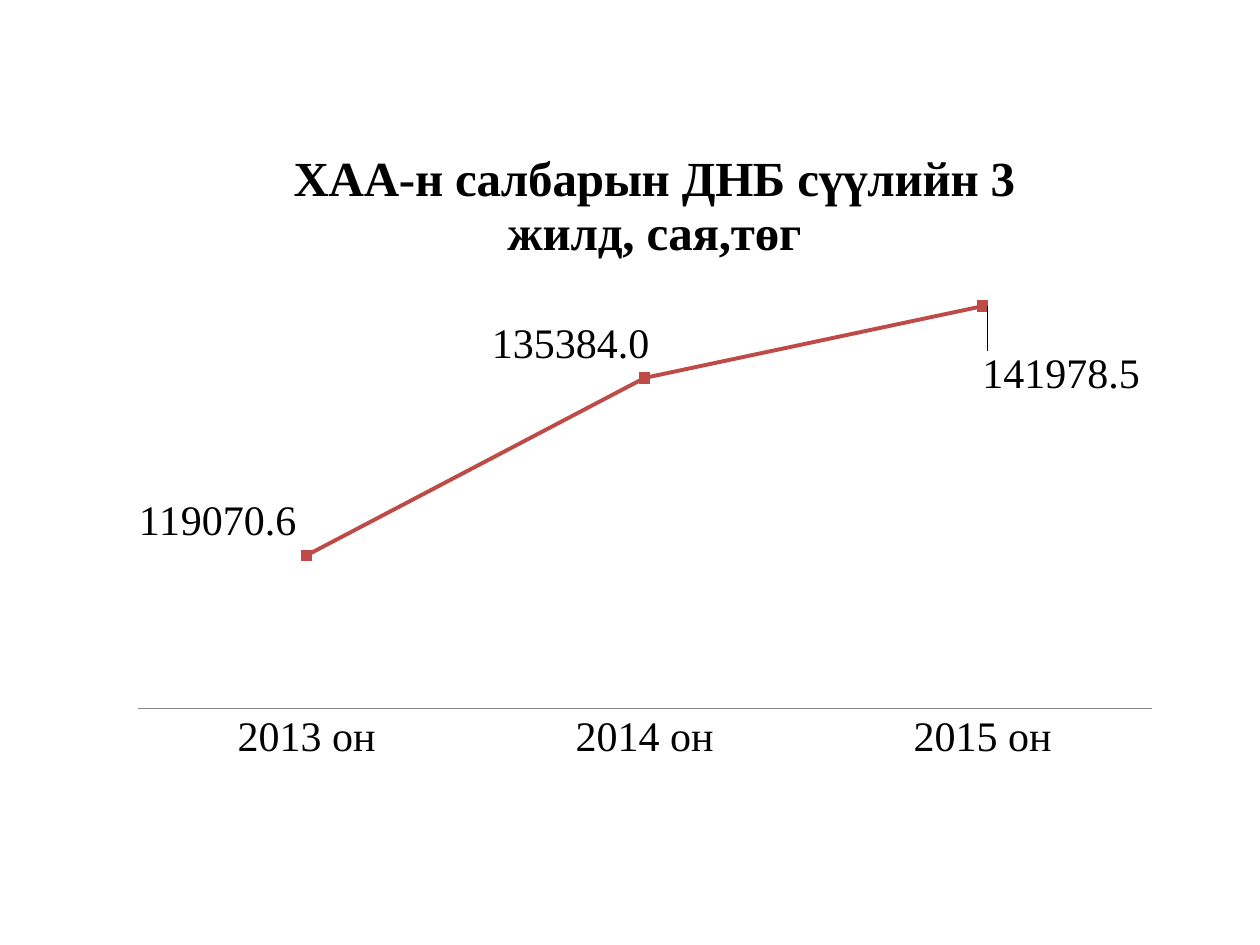
from dataclasses import dataclass

from lxml.etree import SubElement
from pptx import Presentation
from pptx.chart.data import CategoryChartData
from pptx.dml.color import RGBColor
from pptx.enum.chart import XL_CHART_TYPE as ChartType
from pptx.enum.chart import XL_LABEL_POSITION as LabelPosition
from pptx.enum.chart import XL_MARKER_STYLE as MarkerStyle
from pptx.enum.chart import XL_TICK_MARK as TickMark
from pptx.oxml.ns import qn
from pptx.util import Cm, Pt

# Content
TITLE = "ХАА-н салбарын ДНБ сүүлийн 3 жилд, сая,төг"
SERIES_NAME = "Series 1"
# Year, value, label side, label shift as shares of the chart size
YEARS = [
    ("2013 он", 119070.6, LabelPosition.LEFT, (0, -0.05)),
    ("2014 он", 135384.0, LabelPosition.ABOVE, (-0.07, 0)),
    ("2015 он", 141978.5, LabelPosition.RIGHT, (-0.01, 0.1)),
]
VALUE_RANGE = (105000, 145000)
VALUE_FORMAT = "0.0"


@dataclass(frozen=True)
class Theme:
    font: str = "Times New Roman"
    text: str = "000000"
    line: str = "BE4B48"
    axis: str = "868686"
    title_size: float = 28
    label_size: float = 24
    line_width: float = 2.25
    axis_width: float = 0.75
    marker_size: int = 6


THEME = Theme()


def format_font(font, size=THEME.label_size, bold=False):
    font.name = THEME.font
    font.size = Pt(size)
    font.bold = bold
    font.color.rgb = RGBColor.from_string(THEME.text)


def add_text(text_frame, text, **font_format):
    paragraph = text_frame.paragraphs[0]
    run = paragraph.add_run()
    run.text = text
    format_font(run.font, **font_format)


def set_layout(element, after, **settings):
    """Place a chart part by hand; the layout follows the child named by after."""
    for old_layout in element.findall(qn("c:layout")):
        element.remove(old_layout)
    layout = SubElement(element, qn("c:layout"))
    manual = SubElement(layout, qn("c:manualLayout"))
    for name, value in settings.items():
        SubElement(manual, qn(f"c:{name}")).set("val", str(value))
    if after is None:
        element.insert(0, layout)
    else:
        element.find(qn(after)).addnext(layout)


def add_growth_chart(slide):
    chart_data = CategoryChartData(number_format=VALUE_FORMAT)
    chart_data.categories = [year for year, *_ in YEARS]
    chart_data.add_series(SERIES_NAME, [value for _, value, *_ in YEARS])
    chart = slide.shapes.add_chart(
        ChartType.LINE_MARKERS_STACKED,
        Cm(2.54), Cm(2.11), Cm(21.34), Cm(13.77), chart_data,
    ).chart
    chart.has_legend = False
    format_font(chart.font)

    # Title and plot area
    chart.has_title = True
    title = chart.chart_title
    add_text(title.text_frame, TITLE, size=THEME.title_size, bold=True)
    title.include_in_layout = False
    set_layout(title._element, "c:tx", xMode="edge", yMode="edge", x=0.15, y=0.05)
    plot_area = chart._chartSpace.chart.plotArea
    set_layout(plot_area, None, layoutTarget="inner", xMode="edge", yMode="edge",
               x=0.011, y=0.247, w=0.958, h=0.637)

    # Axes
    value_axis = chart.value_axis
    value_axis.minimum_scale, value_axis.maximum_scale = VALUE_RANGE
    value_axis.has_major_gridlines = False
    value_axis.visible = False
    category_axis = chart.category_axis
    category_axis.major_tick_mark = TickMark.NONE
    category_axis.minor_tick_mark = TickMark.NONE
    category_axis.format.line.color.rgb = RGBColor.from_string(THEME.axis)
    category_axis.format.line.width = Pt(THEME.axis_width)
    format_font(category_axis.tick_labels.font)

    # Line and markers
    color = RGBColor.from_string(THEME.line)
    series = chart.plots[0].series[0]
    series.smooth = False
    series.format.line.color.rgb = color
    series.format.line.width = Pt(THEME.line_width)
    series.marker.style = MarkerStyle.SQUARE
    series.marker.size = THEME.marker_size
    series.marker.format.fill.solid()
    series.marker.format.fill.fore_color.rgb = color
    series.marker.format.line.color.rgb = color

    # Value labels
    labels = series.data_labels
    labels.show_value = True
    labels.number_format = VALUE_FORMAT
    labels.number_format_is_linked = False
    format_font(labels.font)
    for index, (_, _, side, (shift_x, shift_y)) in enumerate(YEARS):
        label = series.points[index].data_label
        format_font(label.font)
        label.position = side
        label_element = labels._element.findall(qn("c:dLbl"))[index]
        set_layout(label_element, "c:idx", x=shift_x, y=shift_y)


def main():
    presentation = Presentation()
    presentation.slide_width, presentation.slide_height = Cm(25.4), Cm(19.05)
    slide = presentation.slides.add_slide(presentation.slide_layouts[6])
    add_growth_chart(slide)
    presentation.save("out.pptx")


if __name__ == "__main__":
    main()
